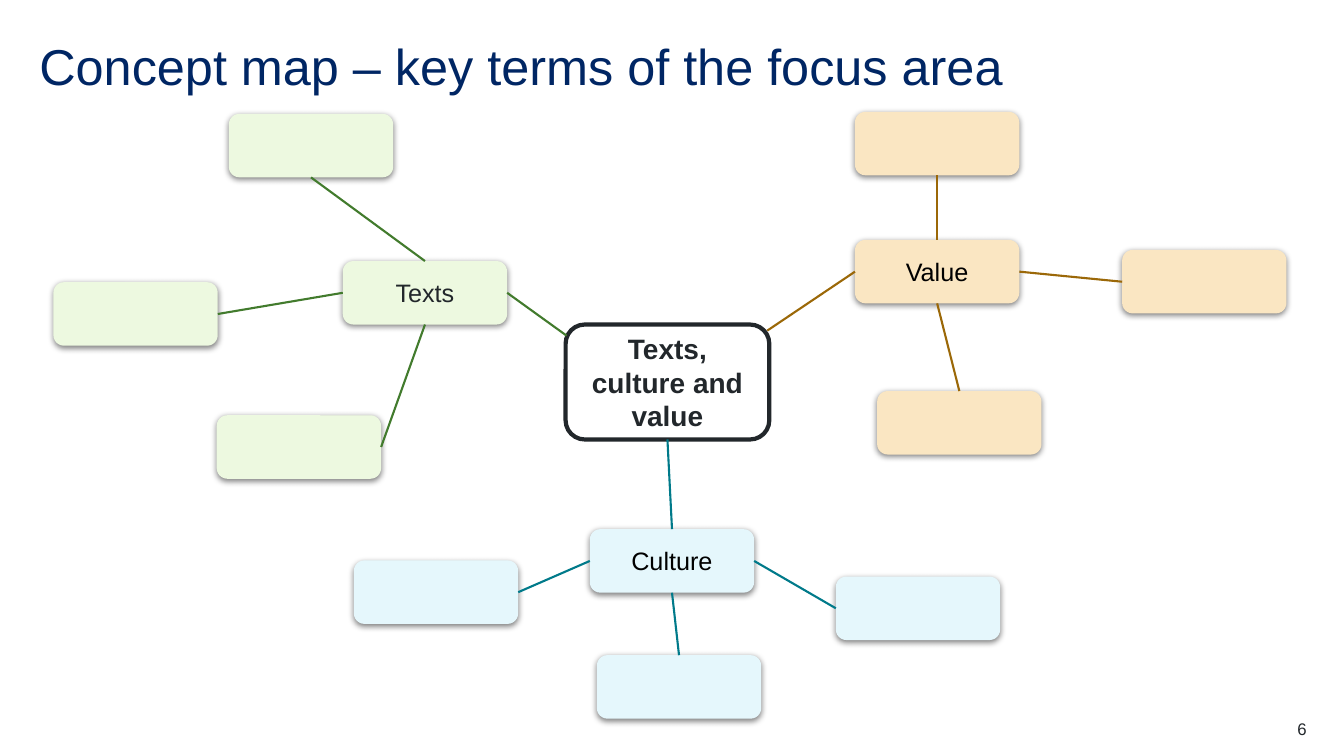
from lxml import etree
from pptx import Presentation
from pptx.dml.color import RGBColor
from pptx.enum import shapes, text
from pptx.oxml import parse_xml
from pptx.oxml.ns import nsdecls, qn
from pptx import util as u

PX = 9144
NODE_W, NODE_H = 163, 63
TOP, LEFT, BOTTOM, RIGHT = range(4)

WHITE = RGBColor(0xFF, 0xFF, 0xFF)
BLACK = RGBColor(0x00, 0x00, 0x00)
INK = RGBColor(0x22, 0x27, 0x2B)
NAVY = RGBColor(0x00, 0x26, 0x64)
LIGHT_GREEN = RGBColor(0xED, 0xF9, 0xE0)
GREEN = RGBColor(0x42, 0x7B, 0x2D)
LIGHT_BLUE = RGBColor(0xE5, 0xF7, 0xFC)
TEAL = RGBColor(0x00, 0x7A, 0x8A)
LIGHT_ORANGE = RGBColor(0xFA, 0xE6, 0xC2)
BROWN = RGBColor(0x9B, 0x68, 0x08)

SHADOW = (
    f'<a:effectLst {nsdecls("a")}>'
    '<a:outerShdw blurRad="57150" dist="19050" dir="5400000" algn="ctr" rotWithShape="0">'
    '<a:srgbClr val="000000"><a:alpha val="50000"/></a:srgbClr>'
    '</a:outerShdw></a:effectLst>'
)

BRANCHES = [
    ("Texts", (340, 259), LIGHT_GREEN, GREEN, INK,
     (562, 333), RIGHT,
     [((227, 113), TOP, BOTTOM),
      ((53, 280), LEFT, RIGHT),
      ((215, 412), BOTTOM, RIGHT)]),
    ("Culture", (585, 525), LIGHT_BLUE, TEAL, BLACK,
     (662, 436), TOP,
     [((351, 556), LEFT, RIGHT),
      ((592, 650), BOTTOM, TOP),
      ((829, 572), RIGHT, LEFT)]),
    ("Value", (848, 238), LIGHT_ORANGE, BROWN, BLACK,
     (761, 328), LEFT,
     [((848, 111), TOP, BOTTOM),
      ((1113, 248), RIGHT, LEFT),
      ((870, 388), BOTTOM, TOP)]),
]


def px(*values):
    return [u.Emu(v * PX) for v in values]


def write(sp, content, size, color, align, bold=False):
    tf = sp.text_frame
    tf.word_wrap = True
    tf.text = content
    p = tf.paragraphs[0]
    p.alignment = align
    font = p.runs[0].font
    font.name = "Arial"
    font.size = u.Pt(size)
    font.bold = bold
    font.color.rgb = color
    return p


def add_label(s, box, content, size, color, align, anchor):
    sp = s.shapes.add_textbox(*px(*box))
    tf = sp.text_frame
    tf.margin_left = tf.margin_top = tf.margin_right = tf.margin_bottom = 0
    tf.vertical_anchor = anchor
    return write(sp, content, size, color, align)


def add_box(s, box, fill):
    sp = s.shapes.add_shape(shapes.MSO_SHAPE.ROUNDED_RECTANGLE, *px(*box))
    sp.shadow.inherit = False
    sp.fill.solid()
    sp.fill.fore_color.rgb = fill
    sp.line.fill.background()
    tf = sp.text_frame
    tf.margin_left, tf.margin_top, tf.margin_right, tf.margin_bottom = px(9, 4, 9, 4)
    tf.vertical_anchor = text.MSO_ANCHOR.MIDDLE
    return sp


def add_node(s, corner, fill):
    sp = add_box(s, (*corner, NODE_W, NODE_H), fill)
    effects = sp._element.spPr.find(qn("a:effectLst"))
    effects.getparent().replace(effects, parse_xml(SHADOW))
    return sp


def add_link(s, start, color):
    x, y = px(*start)
    link = s.shapes.add_connector(shapes.MSO_CONNECTOR.STRAIGHT, x, y, x, y)
    link.line.color.rgb = color
    link.line.width = u.Pt(1.5)
    etree.SubElement(link._element.spPr, qn("a:effectLst"))
    return link


def add_branch(s, name, corner, fill, color, ink, hub_point, hub_side, leaves):
    branch = add_node(s, corner, fill)
    write(branch, name, 18, ink, text.PP_ALIGN.CENTER)
    add_link(s, hub_point, color).end_connect(branch, hub_side)
    for leaf_corner, branch_side, leaf_side in leaves:
        leaf = add_node(s, leaf_corner, fill)
        link = add_link(s, corner, color)
        link.begin_connect(branch, branch_side)
        link.end_connect(leaf, leaf_side)


def main():
    prs = Presentation()
    prs.slide_width, prs.slide_height = px(1333, 750)
    s = prs.slides.add_slide(prs.slide_layouts[6])

    title = add_label(s, (39, 39, 1256, 60), "Concept map – key terms of the focus area",
                      36, NAVY, text.PP_ALIGN.LEFT, text.MSO_ANCHOR.MIDDLE)
    title.line_spacing = 0.9
    add_label(s, (1217, 713, 79, 20), "6", 12, INK,
              text.PP_ALIGN.RIGHT, text.MSO_ANCHOR.TOP)

    hub = add_box(s, (561, 322, 202, 114), WHITE)
    hub.line.color.rgb = INK
    hub.line.width = u.Pt(3)
    write(hub, "Texts, culture and value", 20, INK, text.PP_ALIGN.CENTER, bold=True)

    for branch in BRANCHES:
        add_branch(s, *branch)

    prs.save("out.pptx")


if __name__ == "__main__":
    main()
